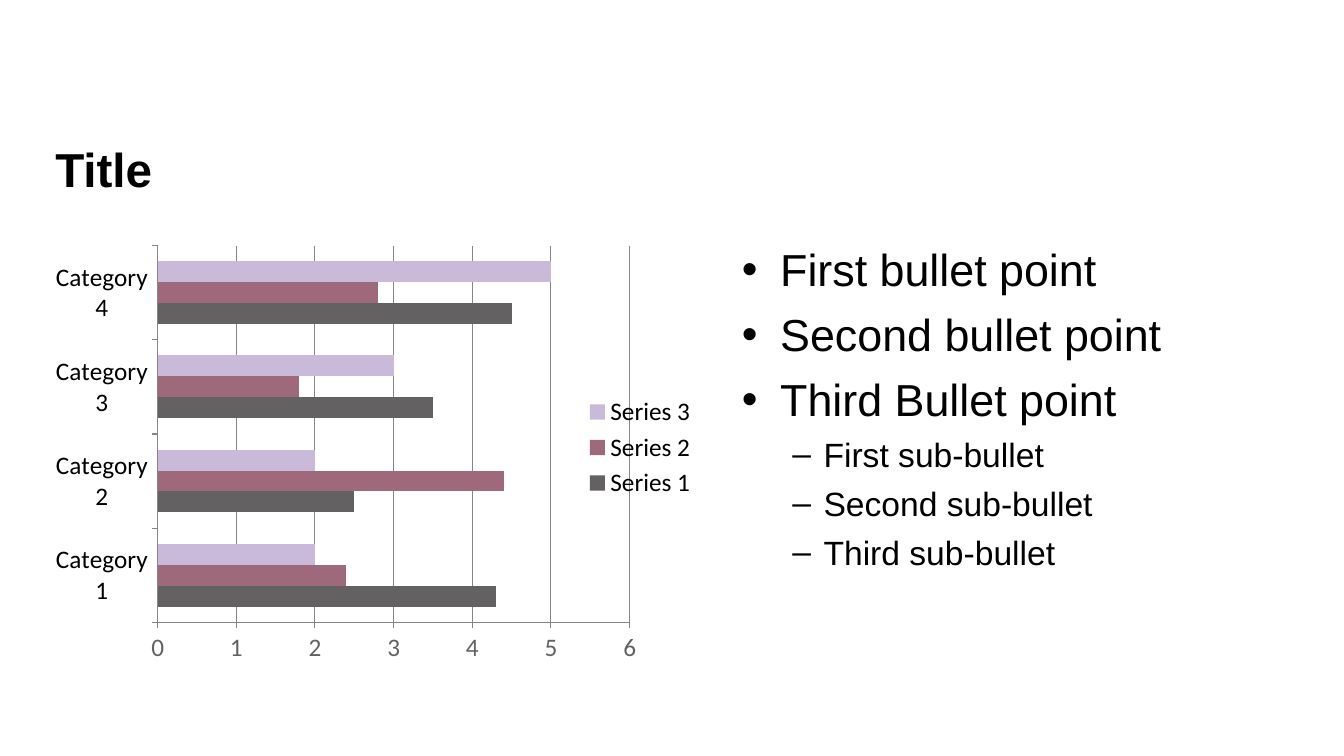
from typing import NamedTuple

from lxml import etree
from pptx import Presentation
from pptx import util as u
from pptx.chart.data import CategoryChartData
from pptx.dml.color import RGBColor
from pptx.enum import chart as ch, text as tx
from pptx.oxml.ns import qn

PX = 9144  # 100 px to the inch
BLACK = RGBColor(0x00, 0x00, 0x00)
GREY = RGBColor(0x63, 0x61, 0x61)
PLUM = RGBColor(0x9D, 0x69, 0x7B)
LILAC = RGBColor(0xCA, 0xBA, 0xD9)
RULE = RGBColor(0x86, 0x86, 0x86)


class Box(NamedTuple):
    left: int
    top: int
    width: int
    height: int

    def emu(self) -> list[int]:
        return [n * PX for n in self]


class Level(NamedTuple):
    mark: str
    size: int
    left: int
    hang: int
    before: int


class Series(NamedTuple):
    name: str
    values: tuple[float, ...]
    color: RGBColor


MAIN = Level("•", 32, 38, 38, 8)
SUB = Level("–", 24, 81, 31, 6)
POINTS = [
    (MAIN, "First bullet point"),
    (MAIN, "Second bullet point"),
    (MAIN, "Third Bullet point"),
    (SUB, "First sub-bullet"),
    (SUB, "Second sub-bullet"),
    (SUB, "Third sub-bullet"),
]
SERIES = [
    Series("Series 1", (4.3, 2.5, 3.5, 4.5), GREY),
    Series("Series 2", (2.4, 4.4, 1.8, 2.8), PLUM),
    Series("Series 3", (2, 2, 3, 5), LILAC),
]
PLOT = {"x": 0.166, "y": 0.051, "w": 0.717, "h": 0.838}


def add_frame(slide, box: Box, anchor=tx.MSO_ANCHOR.TOP):
    frame = slide.shapes.add_textbox(*box.emu()).text_frame
    frame.word_wrap = True
    frame.vertical_anchor = anchor
    return frame


def write(para, words: str, *, size: int, bold=False, color=BLACK) -> None:
    run = para.add_run()
    run.text = words
    font = run.font
    font.name, font.size, font.bold = "Arial", u.Pt(size), bold
    font.color.rgb = color


def add_mark(para, level: Level) -> None:
    """Give the paragraph its bullet and hanging indent."""
    props = para._p.get_or_add_pPr()
    props.set("marL", str(level.left * PX))
    props.set("indent", str(-level.hang * PX))
    etree.SubElement(props, qn("a:buFont")).set("typeface", "Arial")
    etree.SubElement(props, qn("a:buChar")).set("char", level.mark)


def add_points(slide, box: Box) -> None:
    frame = add_frame(slide, box)
    frame.margin_top = 9 * PX
    for i, (level, words) in enumerate(POINTS):
        para = frame.add_paragraph() if i else frame.paragraphs[0]
        add_mark(para, level)
        para.level = int(level is SUB)
        if i:
            para.space_before = u.Pt(level.before)
        write(para, words, size=level.size)


def place_plot(chart) -> None:
    """Fix the inner plot area as shares of the chart."""
    area = chart._chartSpace.chart.plotArea
    for old in area.findall(qn("c:layout")):
        area.remove(old)
    layout = etree.Element(qn("c:layout"))
    area.insert(0, layout)
    manual = etree.SubElement(layout, qn("c:manualLayout"))
    parts = {"layoutTarget": "inner", "xMode": "edge", "yMode": "edge", **PLOT}
    for tag, val in parts.items():
        etree.SubElement(manual, qn(f"c:{tag}")).set("val", str(val))


def style_line(line) -> None:
    line.color.rgb = RULE
    line.width = u.Pt(0.75)


def add_bars(slide, box: Box) -> None:
    data = CategoryChartData()
    data.categories = [f"Category {n}" for n in range(1, 5)]
    for item in SERIES:
        data.add_series(item.name, item.values)
    kind = ch.XL_CHART_TYPE.BAR_CLUSTERED
    chart = slide.shapes.add_chart(kind, *box.emu(), data).chart
    chart.has_title = False
    chart.font.name, chart.font.size = "Calibri", u.Pt(18)
    chart.font.color.rgb = BLACK

    plot = chart.plots[0]
    plot.gap_width, plot.overlap = 150, 0
    plot.vary_by_categories = False
    for bar, item in zip(plot.series, SERIES):
        bar.format.fill.solid()
        bar.format.fill.fore_color.rgb = item.color

    for axis, color in ((chart.category_axis, BLACK), (chart.value_axis, GREY)):
        axis.major_tick_mark = ch.XL_TICK_MARK.OUTSIDE
        axis.minor_tick_mark = ch.XL_TICK_MARK.NONE
        axis.tick_labels.font.size = u.Pt(18)
        axis.tick_labels.font.color.rgb = color
        style_line(axis.format.line)
    scale = chart.value_axis
    scale.minimum_scale, scale.maximum_scale, scale.major_unit = 0, 6, 1
    scale.has_major_gridlines = True
    style_line(scale.major_gridlines.format.line)

    chart.has_legend = True
    chart.legend.position = ch.XL_LEGEND_POSITION.RIGHT
    chart.legend.include_in_layout = False
    chart.legend.font.size = u.Pt(18)
    chart.legend.font.color.rgb = BLACK
    place_plot(chart)


def main() -> None:
    deck = Presentation()
    deck.slide_width, deck.slide_height = 1333 * PX, 750 * PX
    slide = deck.slides.add_slide(deck.slide_layouts[6])
    head = add_frame(slide, Box(45, 135, 1149, 72), tx.MSO_ANCHOR.MIDDLE)
    head.paragraphs[0].line_spacing = 0.9
    write(head.paragraphs[0], "Title", size=34, bold=True)
    add_points(slide, Box(726, 231, 599, 433))
    add_bars(slide, Box(48, 221, 653, 446))
    deck.save("out.pptx")


if __name__ == "__main__":
    main()
